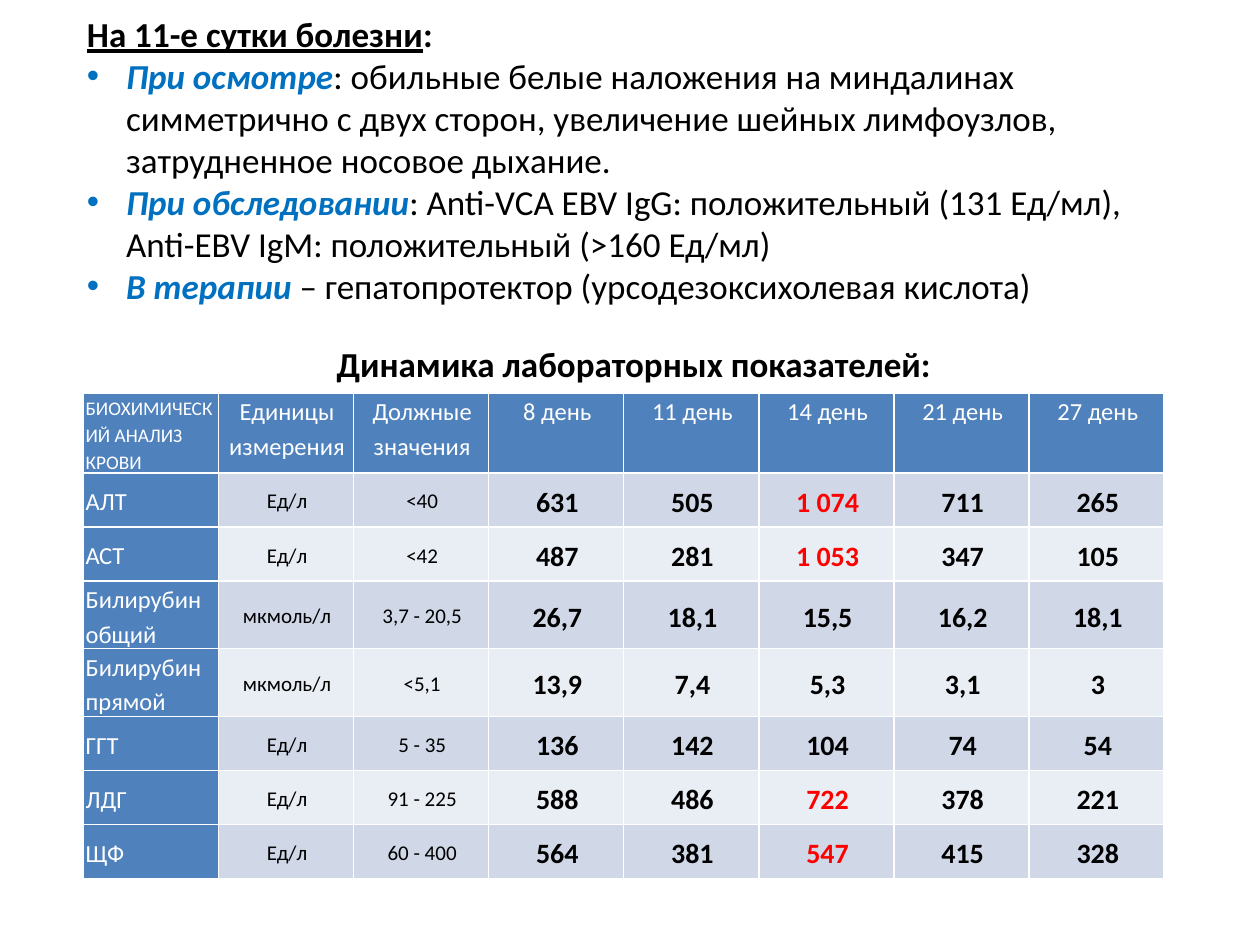
from lxml import etree
from pptx import Presentation
from pptx.dml.color import RGBColor
from pptx.enum import text
from pptx.oxml import ns
from pptx.util import Inches, Pt

BLACK = RGBColor(0x00, 0x00, 0x00)
WHITE = RGBColor(0xFF, 0xFF, 0xFF)
RED = RGBColor(0xFF, 0x00, 0x00)
ACCENT = RGBColor(0x00, 0x70, 0xC0)
HEADER_BLUE = RGBColor(0x4F, 0x81, 0xBD)
BANDS = (RGBColor(0xD0, 0xD8, 0xE8), RGBColor(0xE9, 0xED, 0xF4))

FINDINGS = [
    ("При осмотре", ": обильные белые наложения на миндалинах симметрично с двух "
     "сторон, увеличение шейных лимфоузлов, затрудненное носовое дыхание."),
    ("При обследовании", ": Anti-VCA EBV IgG: положительный (131 Ед/мл), "
     "Anti-EBV IgM: положительный (>160 Ед/мл)"),
    ("В терапии ", "– гепатопротектор (урсодезоксихолевая кислота)"),
]
HEADINGS = ["БИОХИМИЧЕСКИЙ АНАЛИЗ КРОВИ", "Единицы\nизмерения", "Должные\nзначения",
            "8 день", "11 день", "14 день", "21 день", "27 день"]
RESULTS = [
    ["АЛТ", "Ед/л", "<40", "631", "505", "1 074", "711", "265"],
    ["АСТ", "Ед/л", "<42", "487", "281", "1 053", "347", "105"],
    ["Билирубин общий", "мкмоль/л", "3,7 - 20,5", "26,7", "18,1", "15,5", "16,2", "18,1"],
    ["Билирубин прямой", "мкмоль/л", "<5,1", "13,9", "7,4", "5,3", "3,1", "3"],
    ["ГГТ", "Ед/л", "5 - 35", "136", "142", "104", "74", "54"],
    ["ЛДГ", "Ед/л", "91 - 225", "588", "486", "722", "378", "221"],
    ["ЩФ", "Ед/л", "60 - 400", "564", "381", "547", "415", "328"],
]
ROW_HEIGHTS = [0.55, 0.43, 0.43, 0.46, 0.47, 0.43, 0.43, 0.43]
PEAKS = {"1 074", "1 053", "722", "547"}


def add_span(para, words, size=20, color=BLACK, bold=False, italic=False, underline=False):
    span = para.add_run()
    span.text = words
    font = span.font
    font.name, font.size = "Calibri", Pt(size)
    font.bold, font.italic, font.underline = bold, italic, underline
    font.color.rgb = color


def place(box, left, top, width, height):
    box.left, box.top = Inches(left), Inches(top)
    box.width, box.height = Inches(width), Inches(height)
    frame = box.text_frame
    frame.word_wrap = True
    frame.auto_size = text.MSO_AUTO_SIZE.SHAPE_TO_FIT_TEXT
    frame.vertical_anchor = text.MSO_ANCHOR.TOP
    return frame


def set_indent(para, bullet):
    """Give the paragraph a hanging bullet, or no bullet and no indent."""
    para.space_before = Pt(0)
    hang = Inches(0.31) if bullet else 0
    properties = para._p.get_or_add_pPr()
    properties.set("marL", str(hang))
    properties.set("indent", str(-hang))
    if bullet:
        etree.SubElement(properties, ns.qn("a:buFont")).set("typeface", "Arial")
        etree.SubElement(properties, ns.qn("a:buChar")).set("char", "•")
    else:
        etree.SubElement(properties, ns.qn("a:buNone"))


def fill_findings(box):
    frame = place(box, 0.59, 0.05, 8.72, 2.79)
    para = frame.paragraphs[0]
    set_indent(para, bullet=False)
    add_span(para, "На 11-е сутки болезни", bold=True, underline=True)
    add_span(para, ":", bold=True)
    for label, details in FINDINGS:
        para = frame.add_paragraph()
        set_indent(para, bullet=True)
        add_span(para, label, color=ACCENT, bold=True, italic=True)
        add_span(para, details)


def fill_table_title(box):
    para = place(box, 0.75, 2.67, 8.56, 0.44).paragraphs[0]
    para.alignment = text.PP_ALIGN.CENTER
    add_span(para, "Динамика лабораторных показателей:", bold=True)


def add_borders(cell):
    properties = cell._tc.get_or_add_tcPr()
    for side in ("lnL", "lnR", "lnT", "lnB"):
        line = etree.SubElement(properties, ns.qn(f"a:{side}"), w=str(Pt(1)))
        fill = etree.SubElement(line, ns.qn("a:solidFill"))
        etree.SubElement(fill, ns.qn("a:srgbClr"), val=str(WHITE))


def cell_format(row, column, words):
    if row == 0 or column == 0:
        return {"size": 11 if row == column else 14, "color": WHITE}
    if column < 3:
        return {"size": 12}
    return {"size": 16, "bold": True, "color": RED if words in PEAKS else BLACK}


def fill_cell(cell, row, column, words):
    add_borders(cell)
    cell.fill.solid()
    is_heading = row == 0 or column == 0
    cell.fill.fore_color.rgb = HEADER_BLUE if is_heading else BANDS[(row - 1) % 2]
    cell.margin_left = Inches(0.02)
    cell.margin_top = cell.margin_right = cell.margin_bottom = 0
    at_top = row == 0 and column > 0
    cell.vertical_anchor = text.MSO_ANCHOR.TOP if at_top else text.MSO_ANCHOR.MIDDLE
    frame = cell.text_frame
    for index, line in enumerate(words.split("\n")):
        para = frame.add_paragraph() if index else frame.paragraphs[0]
        para.line_spacing = 1.15
        para.alignment = text.PP_ALIGN.CENTER if column else text.PP_ALIGN.LEFT
        if row == 0 and column > 2:
            para.space_after = Pt(10)
        add_span(para, line, **cell_format(row, column, words))


def add_results_table(page):
    rows = [HEADINGS, *RESULTS]
    table = page.shapes.add_table(len(rows), len(HEADINGS), Inches(0.66), Inches(3.12),
                                  Inches(8.58), Inches(sum(ROW_HEIGHTS))).table
    table.first_col = True
    for row, (height, values) in enumerate(zip(ROW_HEIGHTS, rows)):
        table.rows[row].height = Inches(height)
        for column, words in enumerate(values):
            fill_cell(table.cell(row, column), row, column, words)


def main():
    deck = Presentation()
    deck.slide_width, deck.slide_height = Inches(10), Inches(7.5)
    page = deck.slides.add_slide(deck.slide_layouts[1])
    fill_findings(page.placeholders[1])
    add_results_table(page)
    fill_table_title(page.shapes.title)
    deck.save("out.pptx")


if __name__ == "__main__":
    main()
